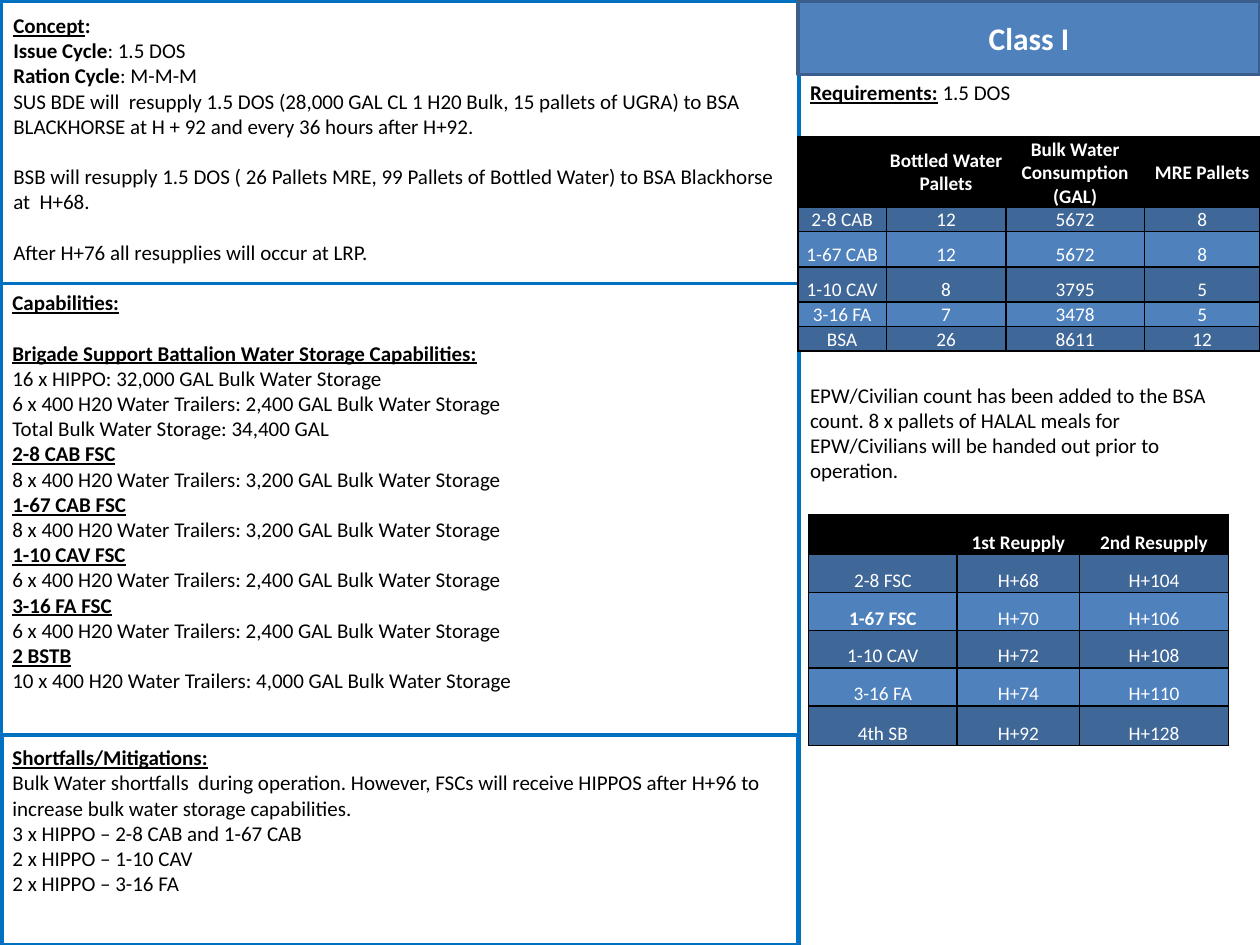
from collections import namedtuple

from lxml.etree import SubElement
from pptx import Presentation
from pptx.dml.color import RGBColor
from pptx.enum.shapes import MSO_SHAPE
from pptx.enum.text import MSO_ANCHOR, MSO_AUTO_SIZE, PP_ALIGN
from pptx.oxml.ns import qn
from pptx.util import Pt

BLACK = RGBColor(0x00, 0x00, 0x00)
WHITE = RGBColor(0xFF, 0xFF, 0xFF)
FRAME_BLUE = RGBColor(0x00, 0x70, 0xC0)
BLUE = RGBColor(0x4F, 0x81, 0xBD)
BLUE_EDGE = RGBColor(0x3A, 0x5F, 0x8C)
BLUE_DARK = RGBColor(0x3F, 0x67, 0x97)
FONT = "Calibri"
BLANK_LINE = 14.4

Box = namedtuple("Box", "left top width height")
Span = namedtuple("Span", "text bold underline", defaults=(False, False))
Line = namedtuple("Line", "spans gap", defaults=(0,))


def heading(text, gap=0):
    """Return a bold underlined line."""
    return Line([Span(text, True, True)], gap)


def plain(text, gap=0):
    """Return a regular line."""
    return Line([Span(text)], gap)


def trailers(count):
    """Return the line that gives the storage of a number of water trailers."""
    return plain(f"{count} x 400 H20 Water Trailers: {count * 400:,} GAL Bulk Water Storage")


CONCEPT = [
    Line([Span("Concept", True, True), Span(":", True)]),
    Line([Span("Issue Cycle", True), Span(": 1.5 DOS")]),
    Line([Span("Ration Cycle", True), Span(": M-M-M")]),
    plain("SUS BDE will  resupply 1.5 DOS (28,000 GAL CL 1 H20 Bulk, 15 pallets of UGRA) "
          "to BSA BLACKHORSE at H + 92 and every 36 hours after H+92."),
    plain("BSB will resupply 1.5 DOS ( 26 Pallets MRE, 99 Pallets of Bottled Water) "
          "to BSA Blackhorse at  H+68.", gap=1),
    plain("After H+76 all resupplies will occur at LRP.", gap=1),
]
COMPANY_TRAILERS = [("2-8 CAB FSC", 8), ("1-67 CAB FSC", 8), ("1-10 CAV FSC", 6),
                    ("3-16 FA FSC", 6), ("2 BSTB", 10)]
CAPABILITIES = [
    heading("Capabilities:"),
    heading("Brigade Support Battalion Water Storage Capabilities:", gap=1),
    plain("16 x HIPPO: 32,000 GAL Bulk Water Storage"),
    trailers(6),
    plain("Total Bulk Water Storage: 34,400 GAL"),
]
for company, trailer_count in COMPANY_TRAILERS:
    CAPABILITIES += [heading(company), trailers(trailer_count)]
SHORTFALLS = [
    heading("Shortfalls/Mitigations:"),
    plain("Bulk Water shortfalls  during operation. However, FSCs will receive HIPPOS "
          "after H+96 to increase bulk water storage capabilities."),
    plain("3 x HIPPO – 2-8 CAB and 1-67 CAB"),
    plain("2 x HIPPO – 1-10 CAV"),
    plain("2 x HIPPO – 3-16 FA"),
]
REQUIREMENTS = [
    Line([Span("Requirements:", True, True), Span(" 1.5 DOS")]),
    plain("EPW/Civilian count has been added to the BSA count. 8 x pallets of HALAL meals "
          "for EPW/Civilians will be handed out prior to operation.", gap=11),
]
DEMAND = [
    ["", "Bottled Water Pallets", "Bulk Water Consumption (GAL)", "MRE Pallets"],
    ["2-8 CAB", "12", "5672", "8"],
    ["1-67 CAB", "12", "5672", "8"],
    ["1-10 CAV", "8", "3795", "5"],
    ["3-16 FA", "7", "3478", "5"],
    ["BSA", "26", "8611", "12"],
]
SCHEDULE = [
    ["", "1st Reupply", "2nd Resupply"],
    ["2-8 FSC", "H+68", "H+104"],
    ["1-67 FSC", "H+70", "H+106"],
    ["1-10 CAV", "H+72", "H+108"],
    ["3-16 FA", "H+74", "H+110"],
    ["4th SB", "H+92", "H+128"],
]


def style_font(font, size, color, bold, underline=False):
    """Set the look of one font."""
    font.name, font.size = FONT, Pt(size)
    font.bold, font.underline = bold, underline
    font.color.rgb = color


def add_panel(page, box, edge, fill=None):
    """Draw an outlined rectangle, filled when a colour is given."""
    panel = page.shapes.add_shape(MSO_SHAPE.RECTANGLE, *map(Pt, box))
    panel.shadow.inherit = False
    panel.line.color.rgb = edge
    panel.line.width = Pt(2)
    if fill is None:
        panel.fill.background()
    else:
        panel.fill.solid()
        panel.fill.fore_color.rgb = fill
    return panel


def add_banner(page, box, title):
    """Draw the title banner."""
    frame = add_panel(page, box, BLUE_EDGE, BLUE).text_frame
    frame.text = title
    frame.vertical_anchor = MSO_ANCHOR.MIDDLE
    para = frame.paragraphs[0]
    para.alignment = PP_ALIGN.CENTER
    style_font(para.runs[0].font, 18, WHITE, True)


def add_notes_block(page, box, lines):
    """Place a block of lines, each made of styled spans."""
    frame = page.shapes.add_textbox(*map(Pt, box)).text_frame
    frame.word_wrap = True
    frame.auto_size = MSO_AUTO_SIZE.SHAPE_TO_FIT_TEXT
    for index, line in enumerate(lines):
        para = frame.add_paragraph() if index else frame.paragraphs[0]
        if line.gap:
            para.space_before = Pt(line.gap * BLANK_LINE)
        for part in line.spans:
            span = para.add_run()
            span.text = part.text
            style_font(span.font, 12, BLACK, part.bold, part.underline)


def add_borders(cell):
    """Give a cell thin black borders on all sides."""
    properties = cell._tc.get_or_add_tcPr()
    for index, side in enumerate(("lnL", "lnR", "lnT", "lnB")):
        border = properties.makeelement(qn(f"a:{side}"), {"w": str(Pt(1))})
        fill = SubElement(border, qn("a:solidFill"))
        SubElement(fill, qn("a:srgbClr"), val=str(BLACK))
        properties.insert(index, border)


def add_grid(page, box, rows, widths, heights, middle=(), bold=()):
    """Place a table with a black header and alternating blue rows."""
    table = page.shapes.add_table(len(rows), len(widths), *map(Pt, box)).table
    table.first_row = table.horz_banding = False
    for column, width in zip(table.columns, widths):
        column.width = Pt(width)
    for index, (values, height) in enumerate(zip(rows, heights)):
        table.rows[index].height = Pt(height)
        color = (BLUE_DARK if index % 2 else BLUE) if index else BLACK
        for position, value in enumerate(values):
            cell = table.cell(index, position)
            cell.text = value
            cell.fill.solid()
            cell.fill.fore_color.rgb = color
            cell.margin_left = cell.margin_right = cell.margin_top = Pt(0.7)
            cell.margin_bottom = Pt(0)
            centred = (index, position) in middle
            cell.vertical_anchor = MSO_ANCHOR.MIDDLE if centred else MSO_ANCHOR.BOTTOM
            para = cell.text_frame.paragraphs[0]
            para.alignment = PP_ALIGN.CENTER
            style_font(para.font, 11, WHITE, False)
            for span in para.runs:
                style_font(span.font, 11, WHITE, index == 0 or value in bold)
            add_borders(cell)


def main():
    """Build the Class I slide."""
    deck = Presentation()
    deck.slide_width, deck.slide_height = Pt(720), Pt(540)
    page = deck.slides.add_slide(deck.slide_layouts[6])
    add_panel(page, Box(0.7, 0.7, 455.8, 161.3), FRAME_BLUE)
    add_panel(page, Box(0.7, 162, 455.8, 378), FRAME_BLUE)
    add_panel(page, Box(1.5, 420, 454.5, 120), FRAME_BLUE)
    add_banner(page, Box(456, 0.7, 264, 42), "Class I")
    add_notes_block(page, Box(0.5, 3.6, 449.5, 211), CONCEPT)
    add_notes_block(page, Box(0, 162, 456.5, 342), CAPABILITIES)
    add_notes_block(page, Box(455.8, 42, 258, 240), REQUIREMENTS)
    add_notes_block(page, Box(0, 422, 456, 160), SHORTFALLS)
    add_grid(page, Box(456, 78, 264, 123), DEMAND, [50.5, 68.3, 79.2, 66],
             [30, 10, 20.2, 20.2, 10, 10], middle=[(0, 1), (0, 2), (0, 3), (1, 1)])
    add_grid(page, Box(462, 294, 240, 132), SCHEDULE, [85, 70, 85],
             [23, 21.6, 21.6, 21.6, 21.6, 22.6], bold=["1-67 FSC"])
    deck.save("out.pptx")


if __name__ == "__main__":
    main()
